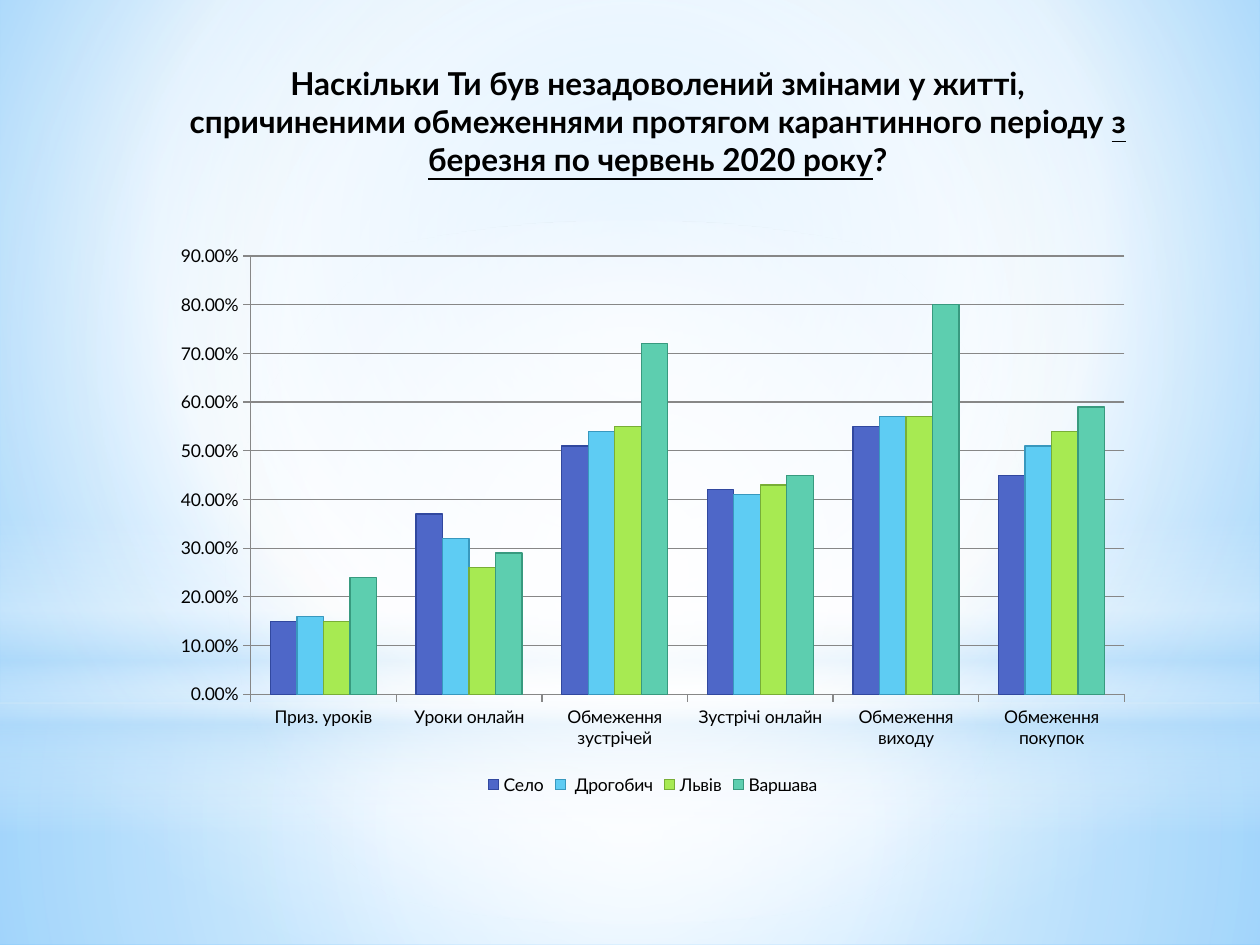
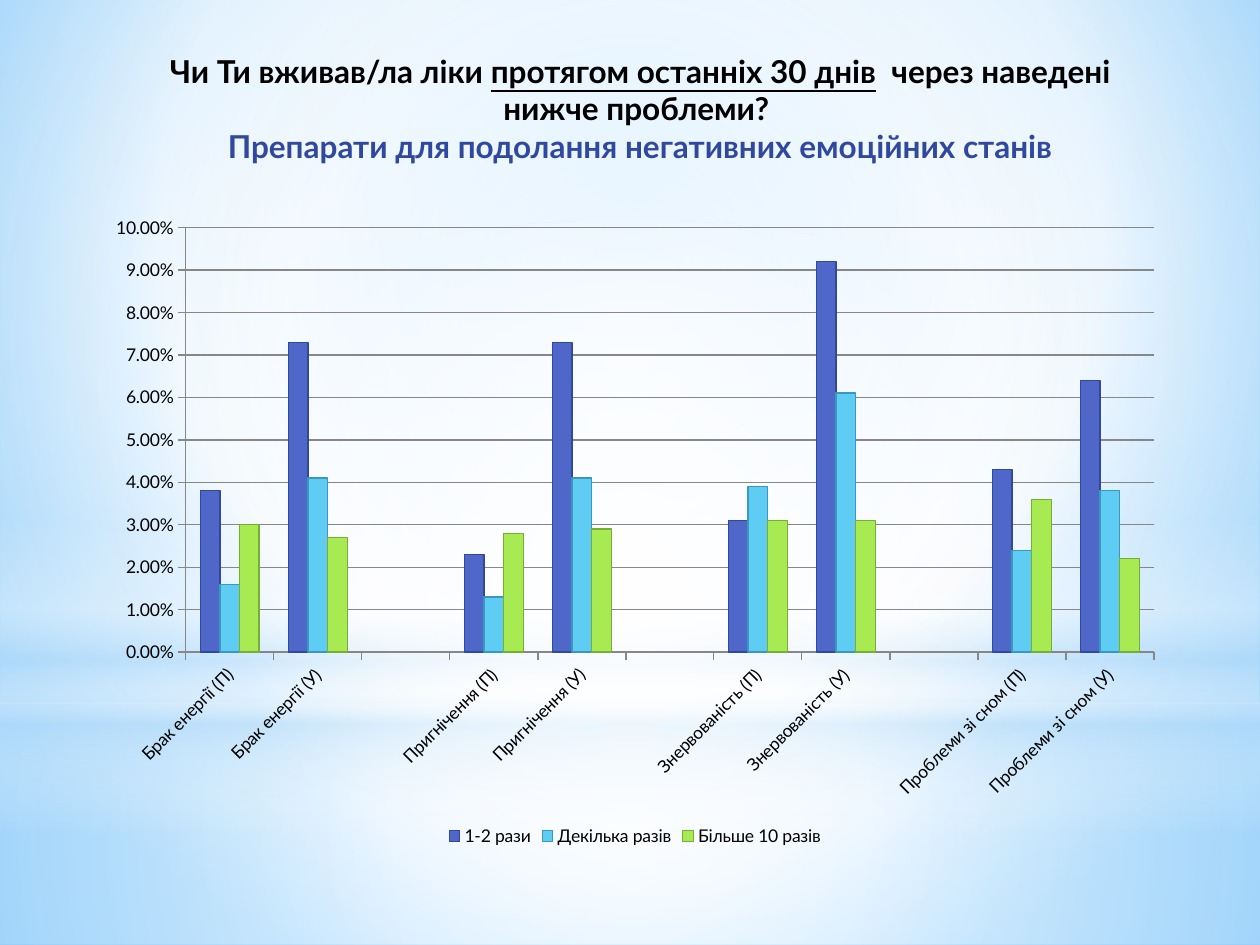
import pptx
import pptx.util
import pptx.oxml
import pptx.chart.data
import pptx.dml.color
import pptx.enum.chart
import pptx.enum.shapes
import pptx.enum.text

Pt = pptx.util.Pt
RGB = pptx.dml.color.RGBColor
SHAPE = pptx.enum.shapes.MSO_SHAPE
CHART = pptx.enum.chart

BLACK = RGB(0, 0, 0)
NAVY = RGB(0x31, 0x48, 0x9F)
GREY = RGB(0x87, 0x87, 0x87)
WHITE = RGB(0xFF, 0xFF, 0xFF)
PALE = RGB(0xB4, 0xDC, 0xFA)
SKY = RGB(0x9E, 0xD5, 0xFF)
AZURE = RGB(0x5B, 0xB9, 0xFF)
BARS = [
    (RGB(0x4E, 0x67, 0xC8), NAVY),
    (RGB(0x5E, 0xCC, 0xF3), RGB(0x38, 0x98, 0xBE)),
    (RGB(0xA7, 0xEA, 0x52), RGB(0x78, 0xAE, 0x36)),
    (RGB(0x5D, 0xCE, 0xAF), RGB(0x38, 0x9A, 0x7F)),
]
FONT = "Lato"
NS = "http://schemas.openxmlformats.org/drawingml/2006/main"

CENTER = (50, 50, 50, 50)
LAYERS = [
    (SHAPE.RECTANGLE, 401.76, 138.24,
     [(0, WHITE, 91), (37, WHITE, 76), (100, PALE, 79)], CENTER),
    (SHAPE.RECTANGLE, 0, 401.76,
     [(0, WHITE, 89), (48, WHITE, 62), (100, PALE, 79)], CENTER),
    (SHAPE.RECTANGLE, 296.64, 180,
     [(0, WHITE, 0), (29, WHITE, 30), (45, PALE, 40),
      (55, WHITE, 26), (65, PALE, 60), (100, WHITE, 0)], None),
    (SHAPE.OVAL, 126, 401.76, [(0, WHITE, 100), (56, WHITE, 0)], CENTER),
]

SLIDES = [
    {
        "title": (97.92, 33.12),
        "lines": [[
            ("Наскільки Ти був незадоволений змінами у житті, "
             "спричиненими обмеженнями протягом карантинного періоду ", {}),
            ("з березня по червень 2020 року", {"under": True}),
            ("?", {}),
        ]],
        "frame": (92.16, 133.92, 561.6, 323.28),
        "cats": ["Приз. уроків", "Уроки онлайн", "Обмеження зустрічей",
                 "Зустрічі онлайн", "Обмеження виходу", "Обмеження покупок"],
        "rows": [
            ("Село", [0.15, 0.37, 0.51, 0.42, 0.55, 0.45]),
            (" Дрогобич", [0.16, 0.32, 0.54, 0.41, 0.57, 0.51]),
            ("Львів", [0.15, 0.26, 0.55, 0.43, 0.57, 0.54]),
            ("Варшава", [0.24, 0.29, 0.72, 0.45, 0.8, 0.59]),
        ],
        "top": 0.9,
        "step": 0.1,
    },
    {
        "title": (87.84, 25.92),
        "lines": [
            [
                ("Чи Ти вживав/ла ліки ", {}),
                ("протягом останніх 30 днів", {"under": True}),
                ("  через наведені нижче проблеми? ", {}),
            ],
            [("Препарати для подолання негативних емоційних станів",
              {"color": NAVY})],
        ],
        "frame": (54, 116.64, 617.76, 370.08),
        "cats": ["Брак енергії (П)", "Брак енергії (У)", "",
                 "Пригнічення (П)", "Пригнічення (У)", "",
                 "Знервованість (П)", "Знервованість (У)", "",
                 "Проблеми зі сном (П)", "Проблеми зі сном (У)"],
        "rows": [
            ("1-2 рази", [0.038, 0.073, None, 0.023, 0.073, None,
                          0.031, 0.092, None, 0.043, 0.064]),
            ("Декілька разів", [0.016, 0.041, None, 0.013, 0.041, None,
                                0.039, 0.061, None, 0.024, 0.038]),
            ("Більше 10 разів", [0.03, 0.027, None, 0.028, 0.029, None,
                                 0.031, 0.031, None, 0.036, 0.022]),
        ],
        "top": 0.1,
        "step": 0.01,
    },
]


def blend(owner, stops, rect):
    grad = owner.find(f".//{{{NS}}}gradFill")
    marks = "".join(
        f'<a:gs pos="{pos * 1000}"><a:srgbClr val="{color}">'
        f'<a:alpha val="{alpha * 1000}"/></a:srgbClr></a:gs>'
        for pos, color, alpha in stops)
    if rect:
        sides = " ".join(f'{side}="{part * 1000}"'
                         for side, part in zip("ltrb", rect))
        course = f'<a:path path="circle"><a:fillToRect {sides}/></a:path>'
    else:
        course = '<a:lin ang="5400000" scaled="0"/>'
    fresh = pptx.oxml.parse_xml(
        f'<a:gradFill xmlns:a="{NS}" rotWithShape="1">'
        f'<a:gsLst>{marks}</a:gsLst>{course}</a:gradFill>')
    grad.getparent().replace(grad, fresh)


def write(para, text, size=18, color=BLACK, bold=True, under=False):
    run = para.add_run()
    run.text = text
    font = run.font
    font.name = FONT
    font.size = Pt(size)
    font.bold = bold
    font.underline = under
    font.color.rgb = color


deck = pptx.Presentation()
deck.slide_width = Pt(720)
deck.slide_height = Pt(540)

for page in SLIDES:
    slide = deck.slides.add_slide(deck.slide_layouts[6])
    slide.background.fill.gradient()
    blend(slide.element,
          [(0, SKY, 100), (60, WHITE, 100), (100, AZURE, 100)],
          (20, 10, 20, 60))

    for kind, top, height, stops, rect in LAYERS:
        layer = slide.shapes.add_shape(kind, 0, Pt(top), Pt(720), Pt(height))
        layer.shadow.inherit = False
        layer.line.fill.background()
        layer.fill.gradient()
        blend(layer.element, stops, rect)

    data = pptx.chart.data.CategoryChartData(number_format="0.00%")
    data.categories = page["cats"]
    for name, vals in page["rows"]:
        data.add_series(name, vals)
    chart = slide.shapes.add_chart(
        CHART.XL_CHART_TYPE.COLUMN_CLUSTERED,
        *[Pt(side) for side in page["frame"]], data).chart
    chart.has_title = False
    chart.font.name = FONT
    chart.font.size = Pt(10)
    chart.font.color.rgb = BLACK
    chart.has_legend = True
    chart.legend.position = CHART.XL_LEGEND_POSITION.BOTTOM
    chart.legend.include_in_layout = False

    plot = chart.plots[0]
    plot.vary_by_categories = False
    plot.gap_width = 150
    plot.overlap = 0
    for row, (fill, edge) in zip(plot.series, BARS):
        row.format.fill.solid()
        row.format.fill.fore_color.rgb = fill
        row.format.line.color.rgb = edge
        row.format.line.width = Pt(0.75)

    scale = chart.value_axis
    scale.minimum_scale = 0
    scale.maximum_scale = page["top"]
    scale.major_unit = page["step"]
    scale.tick_labels.number_format = "0.00%"
    scale.tick_labels.number_format_is_linked = False
    scale.has_major_gridlines = True
    scale.major_gridlines.format.line.color.rgb = GREY
    scale.major_gridlines.format.line.width = Pt(0.75)
    for axis in (scale, chart.category_axis):
        axis.major_tick_mark = CHART.XL_TICK_MARK.OUTSIDE
        axis.minor_tick_mark = CHART.XL_TICK_MARK.NONE
        axis.format.line.color.rgb = GREY
        axis.format.line.width = Pt(0.75)

    left, top = page["title"]
    box = slide.shapes.add_textbox(Pt(left), Pt(top), Pt(555.84), Pt(72.72))
    frame = box.text_frame
    frame.word_wrap = True
    frame.auto_size = pptx.enum.text.MSO_AUTO_SIZE.SHAPE_TO_FIT_TEXT
    for spot, line in enumerate(page["lines"]):
        para = frame.add_paragraph() if spot else frame.paragraphs[0]
        para.alignment = pptx.enum.text.PP_ALIGN.CENTER
        for text, style in line:
            write(para, text, **style)

deck.save("out.pptx")
